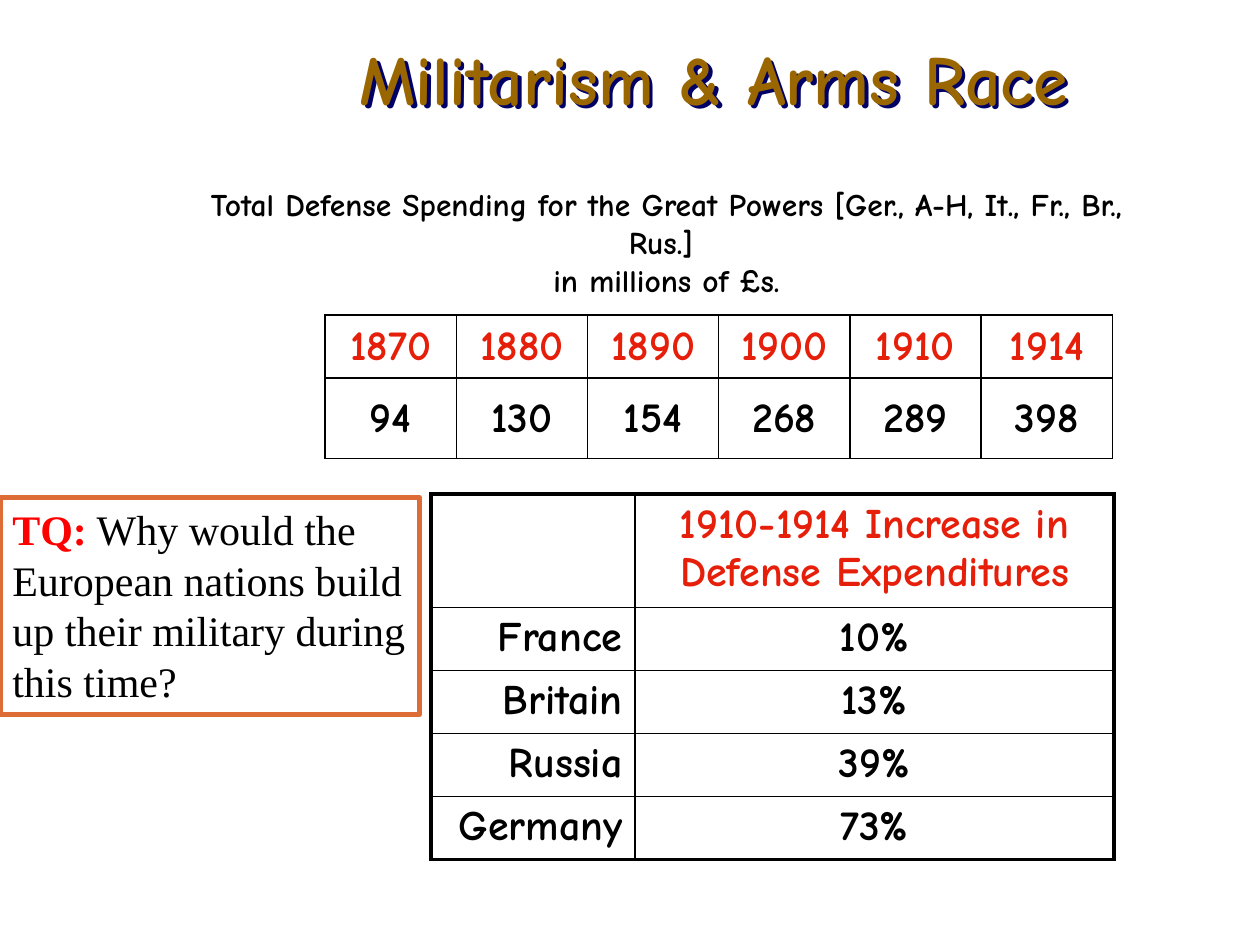
from dataclasses import dataclass
from typing import Optional

from lxml import etree
from pptx import Presentation
from pptx import util as u
from pptx.dml.color import RGBColor
from pptx.enum import shapes, text
from pptx.oxml.ns import qn

LEFT, CENTER, RIGHT = text.PP_ALIGN.LEFT, text.PP_ALIGN.CENTER, text.PP_ALIGN.RIGHT


@dataclass(frozen=True)
class Theme:
    heading_font: str = "Comic Neue"
    question_font: str = "Times New Roman"
    title: str = "996600"
    title_shadow: str = "000066"
    accent: str = "E61F0A"
    ink: str = "000000"
    paper: str = "FFFFFF"
    question_label: str = "FF0000"
    question_line: str = "DE6C36"
    title_size: int = 40
    body_size: int = 24
    caption_size: int = 18
    thin: float = 1
    thick: float = 2.25


THEME = Theme()


@dataclass(frozen=True)
class Box:
    left: float
    top: float
    width: float
    height: float

    def lengths(self) -> tuple:
        return tuple(u.Inches(n) for n in (self.left, self.top, self.width, self.height))


@dataclass(frozen=True)
class TableLayout:
    box: Box
    columns: list[float]
    rows: list[float]
    alignments: list
    anchor: object
    outline: float  # width of the outer border in points


def add_text(paragraph, content: str, *, size: int = THEME.body_size,
             font: str = THEME.heading_font, color: str = THEME.ink,
             bold: bool = True, align=LEFT) -> None:
    """Append text to a paragraph; a newline becomes a line break."""
    paragraph.alignment = align
    for index, line in enumerate(content.split("\n")):
        if index:
            paragraph.add_line_break()
        run = paragraph.add_run()
        run.text = line
        run.font.name = font
        run.font.size = u.Pt(size)
        run.font.bold = bold
        run.font.color.rgb = RGBColor.from_string(color)


def add_text_box(slide, box: Box, content: str, **text_format):
    shape = slide.shapes.add_textbox(*box.lengths())
    shape.text_frame.word_wrap = True
    shape.text_frame.auto_size = text.MSO_AUTO_SIZE.SHAPE_TO_FIT_TEXT
    add_text(shape.text_frame.paragraphs[0], content, **text_format)
    return shape


def add_shadow(shape, color: str) -> None:
    effects = etree.SubElement(shape._element.spPr, qn("a:effectLst"))
    shadow = etree.SubElement(effects, qn("a:outerShdw"), dist="36000",
                              dir="2700000", algn="ctr", rotWithShape="0")
    etree.SubElement(shadow, qn("a:srgbClr"), val=color)


def set_borders(cell, widths: dict[str, float]) -> None:
    properties = cell._tc.get_or_add_tcPr()
    for position, (side, width) in enumerate(widths.items()):
        line = etree.Element(qn(f"a:ln{side}"), w=str(u.Pt(width)))
        fill = etree.SubElement(line, qn("a:solidFill"))
        etree.SubElement(fill, qn("a:srgbClr"), val=THEME.ink)
        properties.insert(position, line)


def add_table(slide, layout: TableLayout, values: list[list[Optional[str]]]) -> None:
    """Draw a plain ruled table whose first row is the header."""
    last_row, last_column = len(layout.rows) - 1, len(layout.columns) - 1
    table = slide.shapes.add_table(last_row + 1, last_column + 1,
                                   *layout.box.lengths()).table
    table.first_row = table.horz_banding = False
    for column, width in zip(table.columns, layout.columns):
        column.width = u.Inches(width)
    for row, height in zip(table.rows, layout.rows):
        row.height = u.Inches(height)
    for r, row_values in enumerate(values):
        for c, value in enumerate(row_values):
            cell = table.cell(r, c)
            cell.fill.background()
            cell.vertical_anchor = layout.anchor
            edges = {"L": c == 0, "R": c == last_column, "T": r == 0, "B": r == last_row}
            set_borders(cell, {side: layout.outline if outer else THEME.thin
                               for side, outer in edges.items()})
            if value:
                add_text(cell.text_frame.paragraphs[0], value,
                         color=THEME.ink if r else THEME.accent,
                         align=layout.alignments[c])


def add_question(slide, box: Box, label: str, question: str) -> None:
    shape = slide.shapes.add_shape(shapes.MSO_SHAPE.RECTANGLE, *box.lengths())
    shape.shadow.inherit = False
    shape.fill.solid()
    shape.fill.fore_color.rgb = RGBColor.from_string(THEME.paper)
    shape.line.color.rgb = RGBColor.from_string(THEME.question_line)
    shape.line.width = u.Pt(3)
    frame = shape.text_frame
    frame.word_wrap = True
    frame.auto_size = text.MSO_AUTO_SIZE.SHAPE_TO_FIT_TEXT
    frame.vertical_anchor = text.MSO_ANCHOR.TOP
    paragraph = frame.paragraphs[0]
    add_text(paragraph, label, font=THEME.question_font, color=THEME.question_label)
    add_text(paragraph, question, font=THEME.question_font, bold=False)


SPENDING = {"1870": "94", "1880": "130", "1890": "154",
            "1900": "268", "1910": "289", "1914": "398"}
INCREASES = {"France": "10%", "Britain": "13%", "Russia": "39%", "Germany": "73%"}


def main() -> None:
    presentation = Presentation()
    presentation.slide_width, presentation.slide_height = u.Inches(10), u.Inches(7.5)
    slide = presentation.slides.add_slide(presentation.slide_layouts[6])

    # Title
    title = add_text_box(slide, Box(1.5, 0.23, 8.33, 0.77), "Militarism & Arms Race",
                         size=THEME.title_size, color=THEME.title, align=CENTER)
    add_shadow(title, THEME.title_shadow)

    # Spending by year
    years = len(SPENDING)
    add_table(slide,
              TableLayout(Box(2.58, 2.5, 6.25, 1.14), [6.25 / years] * years,
                          [0.5, 0.64], [CENTER] * years,
                          text.MSO_ANCHOR.MIDDLE, THEME.thin),
              [list(SPENDING), list(SPENDING.values())])

    # Increase by country
    add_table(slide,
              TableLayout(Box(3.42, 3.92, 5.42, 2.9), [1.62, 3.8],
                          [0.9] + [0.5] * len(INCREASES), [RIGHT, CENTER],
                          text.MSO_ANCHOR.TOP, THEME.thick),
              [[None, "1910-1914 Increase in Defense Expenditures"],
               *map(list, INCREASES.items())])

    # Caption of the spending table
    add_text_box(slide, Box(1.5, 1.42, 7.58, 1.01),
                 "Total Defense Spending for the Great Powers "
                 "[Ger., A-H, It., Fr., Br., Rus.] \nin millions of £s.",
                 size=THEME.caption_size, align=CENTER)

    # Question
    add_question(slide, Box(0, 3.95, 3.33, 1.72), "TQ:",
                 " Why would the European nations build up their military during this time?")

    presentation.save("out.pptx")


if __name__ == "__main__":
    main()
